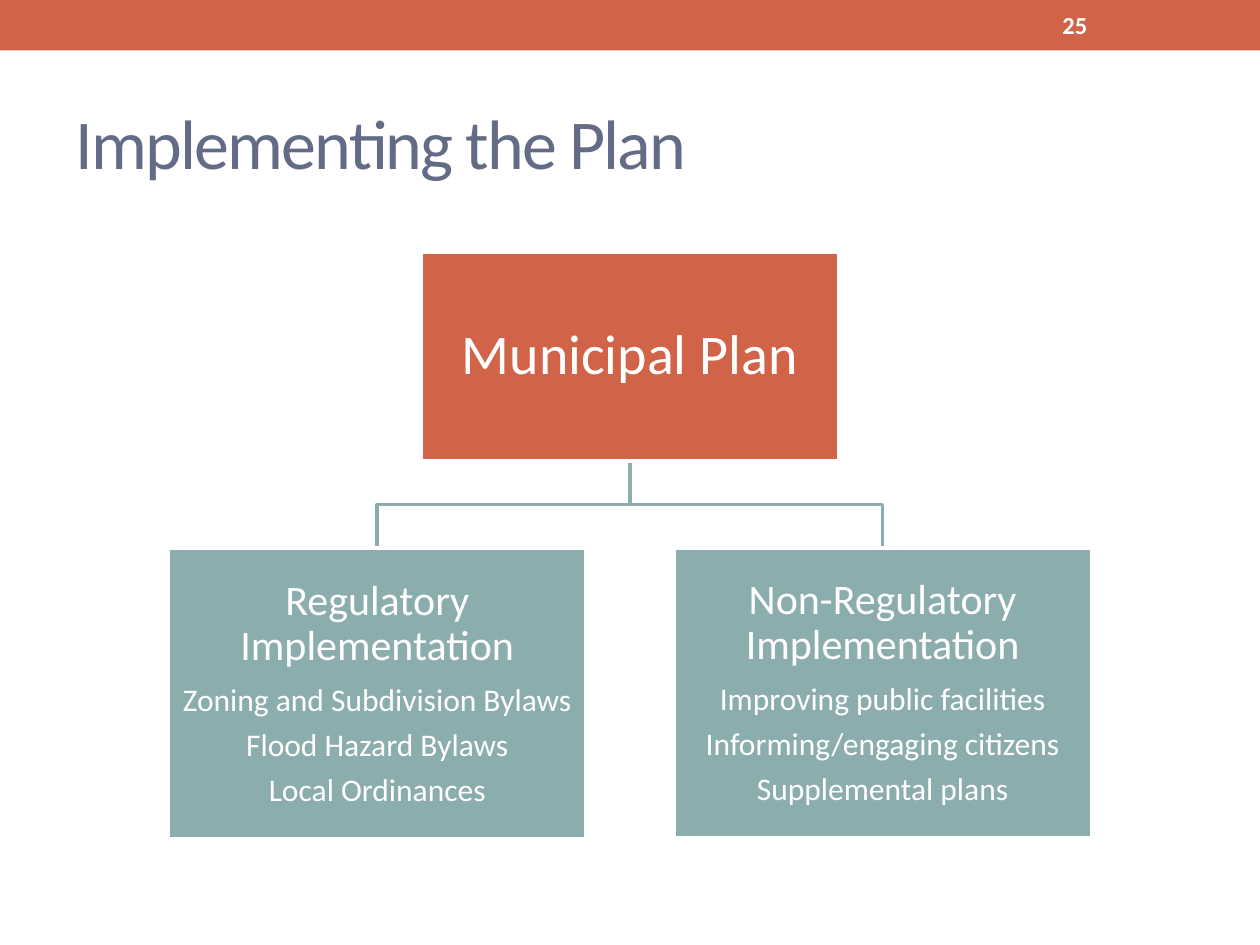
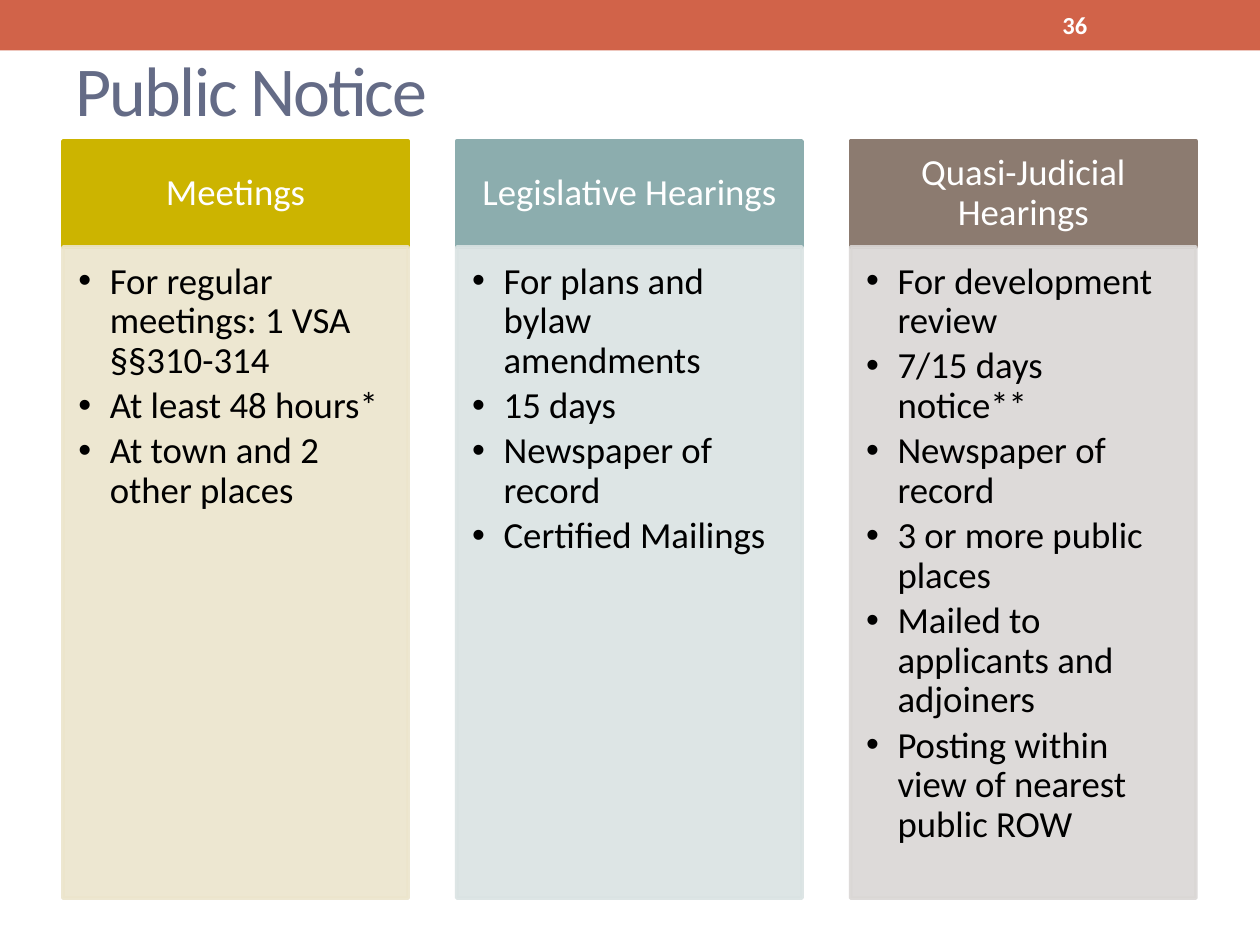
from collections import namedtuple

from lxml.etree import SubElement
from pptx import Presentation
from pptx.dml.color import RGBColor
from pptx.enum.shapes import MSO_SHAPE
from pptx.enum.text import MSO_ANCHOR, PP_ALIGN
from pptx.oxml.ns import qn
from pptx.util import Pt

Box = namedtuple("Box", "left top width height")

FONT = "Calibri"
WHITE, BLACK = "FFFFFF", "000000"
ORANGE, SLATE, TEAL = "D16349", "646B86", "8CADAE"
OLIVE, BROWN = "CCB400", "8C7B70"
SLIDE_WIDTH, SLIDE_HEIGHT = 720, 540
BAND_HEIGHT = 28.8
LINE_WIDTH = 2.08

BRANCHES = [
    (166.2, "Regulatory Implementation",
     ["Zoning and Subdivision Bylaws", "Flood Hazard Bylaws", "Local Ordinances"]),
    (165.6, "Non-Regulatory Implementation",
     ["Improving public facilities", "Informing/engaging citizens", "Supplemental plans"]),
]

NOTICE_COLUMNS = [
    ("Meetings", OLIVE, "ECE5CC",
     ["For regular meetings: 1 VSA §§310-314", "At least 48 hours*",
      "At town and 2 other places"]),
    ("Legislative Hearings", TEAL, "DAE3E3",
     ["For plans and bylaw amendments", "15 days", "Newspaper of record",
      "Certified Mailings"]),
    ("Quasi-Judicial Hearings", BROWN, "DAD7D5",
     ["For development review", "7/15 days notice**", "Newspaper of record",
      "3 or more public places", "Mailed to applicants and adjoiners",
      "Posting within view of nearest public ROW"]),
]


def paint(color_format, color, alpha=None):
    """Apply a hex colour, with an optional opacity in percent, to a solid fill."""
    color_format.solid()
    color_format.fore_color.rgb = RGBColor.from_string(color)
    if alpha is not None:
        for element in color_format._xPr.iter(qn("a:srgbClr")):
            if element.getparent().getparent() is color_format._xPr:
                SubElement(element, qn("a:alpha"), val=str(alpha * 1000))


def add_rectangle(slide, box, fill, line=None, alpha=None):
    """Add a plain rectangle with a solid fill and an optional outline."""
    shape = slide.shapes.add_shape(MSO_SHAPE.RECTANGLE, *map(Pt, box))
    shape.shadow.inherit = False
    paint(shape.fill, fill, alpha)
    if line:
        shape.line.width = Pt(LINE_WIDTH)
        paint(shape.line.fill, line, alpha)
    else:
        shape.line.fill.background()
    return shape


def write_text(shape, lines, color=WHITE, align=PP_ALIGN.LEFT, anchor=MSO_ANCHOR.MIDDLE,
               insets=(7.2, 3.6, 7.2, 3.6), bold=False, tracking=None,
               line_spacing=None, space_ratio=0, bullet_indent=None):
    """Write (text, size) lines into a shape, one paragraph each."""
    frame = shape.text_frame
    frame.word_wrap = True
    frame.vertical_anchor = anchor
    frame.margin_left, frame.margin_top, frame.margin_right, frame.margin_bottom = map(Pt, insets)
    for index, (text, size) in enumerate(lines):
        paragraph = frame.add_paragraph() if index else frame.paragraphs[0]
        paragraph.alignment = align
        paragraph.line_spacing = line_spacing
        paragraph.space_after = Pt(size * space_ratio)
        if bullet_indent:
            properties = paragraph._p.get_or_add_pPr()
            properties.set("marL", str(Pt(bullet_indent)))
            properties.set("indent", str(-Pt(bullet_indent)))
            SubElement(properties, qn("a:buFont"), typeface="Arial")
            SubElement(properties, qn("a:buChar"), char="•")
        run = paragraph.add_run()
        run.text = text
        run.font.name = FONT
        run.font.size = Pt(size)
        run.font.bold = bold
        run.font.color.rgb = RGBColor.from_string(color)
        if tracking:
            run._r.get_or_add_rPr().set("spc", str(tracking * 100))


def add_text(slide, box, text, size, **text_format):
    """Add a text box holding a single line."""
    write_text(slide.shapes.add_textbox(*map(Pt, box)), [(text, size)], **text_format)


def add_base_slide(presentation, title, title_box, number):
    """Add a blank slide with the top band, the title and the slide number."""
    slide = presentation.slides.add_slide(presentation.slide_layouts[6])
    add_rectangle(slide, Box(0, 0, SLIDE_WIDTH, BAND_HEIGHT), ORANGE)
    add_text(slide, title_box, title, 40, color=SLATE, tracking=-1)
    add_text(slide, Box(600, 1.4, 84, 26), str(number), 14, bold=True)
    return slide


def add_branch_line(slide, start, end):
    """Draw a right-angled line down, across and down again."""
    middle = (start[1] + end[1]) / 2
    builder = slide.shapes.build_freeform(Pt(start[0]), Pt(start[1]))
    corners = [(start[0], middle), (end[0], middle), end]
    builder.add_line_segments([(Pt(x), Pt(y)) for x, y in corners], close=False)
    shape = builder.convert_to_shape()
    shape.shadow.inherit = False
    shape.fill.background()
    shape.line.width = Pt(LINE_WIDTH)
    paint(shape.line.fill, TEAL)


def add_plan_tree(slide, box):
    """Place the plan above its branches, centred in the box."""
    width, root_height, branch_offset = 238.8, 119.5, 169.2
    center = box.left + box.width / 2
    root = Box(center - width / 2, box.top, width, root_height)
    step = box.width - width
    branch_boxes = [Box(box.left + index * step, box.top + branch_offset, width, height)
                    for index, (height, _, _) in enumerate(BRANCHES)]
    for branch in branch_boxes:
        add_branch_line(slide, (center, root.top + root.height),
                        (branch.left + width / 2, branch.top))
    contents = [(root, ORANGE, [("Municipal Plan", 32)])]
    for branch, (_, heading, items) in zip(branch_boxes, BRANCHES):
        contents.append((branch, TEAL, [(heading, 24)] + [(item, 18) for item in items]))
    for node, fill, lines in contents:
        write_text(add_rectangle(slide, node, fill, WHITE), lines, align=PP_ALIGN.CENTER,
                   insets=(1.5,) * 4, line_spacing=0.9, space_ratio=0.35)


def add_notice_column(slide, box, heading, color, tint, items):
    """Place a heading above a tinted list inside the box."""
    heading_height = 60.5
    header = add_rectangle(slide, box._replace(height=heading_height), color, color)
    write_text(header, [(heading, 21)], align=PP_ALIGN.CENTER,
               insets=(11.8, 6.7, 11.8, 6.7), line_spacing=0.9, space_ratio=0.35)
    body_box = box._replace(top=box.top + heading_height, height=box.height - heading_height)
    body = add_rectangle(slide, body_box, tint, tint, alpha=90)
    write_text(body, [(item, 21) for item in items], color=BLACK, anchor=MSO_ANCHOR.TOP,
               insets=(8.8, 8.8, 11.8, 13.2), line_spacing=0.9, space_ratio=0.15,
               bullet_indent=18)


def add_notice_columns(slide, box):
    """Spread the notice columns evenly over the box."""
    width = 197.3
    step = (box.width - width) / (len(NOTICE_COLUMNS) - 1)
    for index, column in enumerate(NOTICE_COLUMNS):
        column_box = Box(box.left + index * step, box.top, width, box.height)
        add_notice_column(slide, column_box, *column)


def main():
    """Build both slides and save the presentation."""
    presentation = Presentation()
    presentation.slide_width, presentation.slide_height = Pt(SLIDE_WIDTH), Pt(SLIDE_HEIGHT)
    plan = add_base_slide(presentation, "Implementing the Plan", Box(36, 41.8, 648, 77.8), 25)
    add_plan_tree(plan, Box(96.2, 144, 527.6, 335.4))
    notice = add_base_slide(presentation, "Public Notice", Box(36, 5.8, 648, 90), 36)
    add_notice_columns(notice, Box(36, 80.6, 647.4, 432.7))
    presentation.save("out.pptx")


if __name__ == "__main__":
    main()
